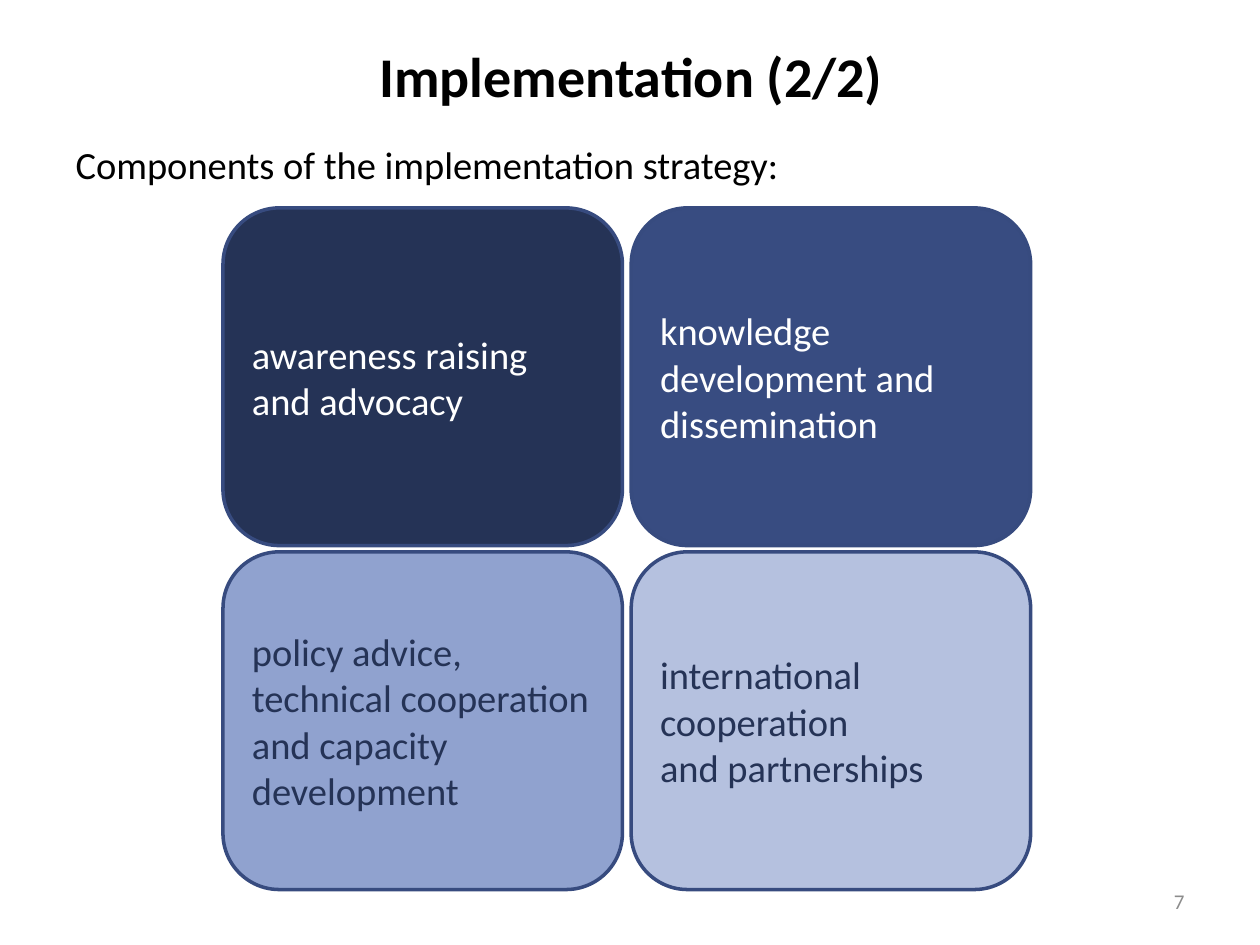
from lxml import etree
from pptx import Presentation
from pptx.dml.color import RGBColor
from pptx.enum.shapes import MSO_SHAPE
from pptx.enum.text import MSO_ANCHOR, MSO_AUTO_SIZE, PP_ALIGN
from pptx.oxml.ns import qn
from pptx.util import Inches, Pt

ROUND = MSO_SHAPE.ROUNDED_RECTANGLE
MIDDLE, TOP = MSO_ANCHOR.MIDDLE, MSO_ANCHOR.TOP
LEFT, CENTER, RIGHT = PP_ALIGN.LEFT, PP_ALIGN.CENTER, PP_ALIGN.RIGHT
FIXED = MSO_AUTO_SIZE.NONE

BLACK = RGBColor(0x00, 0x00, 0x00)
WHITE = RGBColor(0xFF, 0xFF, 0xFF)
GRAY = RGBColor(0x8C, 0x8C, 0x8C)
NAVY = RGBColor(0x25, 0x33, 0x56)
BLUE = RGBColor(0x38, 0x4C, 0x81)
SKY = RGBColor(0x90, 0xA2, 0xCF)
PALE = RGBColor(0xB5, 0xC1, 0xDF)
EDGE = RGBColor(0x37, 0x4B, 0x7F)

CARDS = [
    ("awareness raising and advocacy", NAVY, WHITE),
    ("knowledge development and dissemination", BLUE, WHITE),
    ("policy advice, technical cooperation and capacity development", SKY, NAVY),
    ("international cooperation\vand partnerships", PALE, NAVY),
]


class Deck:
    """Holds the text style and the current slide, and adds its elements."""

    font = "Calibri"

    def __init__(self):
        self.prs = Presentation()
        self.prs.slide_width, self.prs.slide_height = Inches(10), Inches(7.5)
        self.slide = self.prs.slides.add_slide(self.prs.slide_layouts[1])

    def place(self, shape, box):
        for name, size in zip(("left", "top", "width", "height"), box):
            setattr(shape, name, Inches(size))

    def apply(self, target, values):
        for name, value in values.items():
            setattr(target, name, value)

    def fill_text(self, shape, text, size, color, align=LEFT, anchor=MIDDLE, bold=False, after=0):
        frame = shape.text_frame
        frame.text = text
        para = frame.paragraphs[0]
        self.apply(frame, {"word_wrap": True, "auto_size": FIXED, "vertical_anchor": anchor})
        self.apply(para, {"alignment": align, "space_after": Pt(after)})
        for run in para.runs:
            self.apply(run.font, {"name": self.font, "size": Pt(size), "bold": bold})
            run.font.color.rgb = color
        return para

    def title(self, text, box):
        shape = self.slide.shapes.title
        self.place(shape, box)
        self.fill_text(shape, text, 32, BLACK, CENTER, bold=True)

    def body(self, text, box):
        shape = self.slide.placeholders[1]
        self.place(shape, box)
        para = self.fill_text(shape, text, 22, BLACK, anchor=TOP, after=6)
        para.space_before = Pt(4.4)
        props = para._p.get_or_add_pPr()
        props.set("marL", "0")
        props.set("indent", "0")
        etree.SubElement(props, qn("a:buNone"))

    def label(self, text, box):
        shape = self.slide.shapes.add_textbox(*map(Inches, box))
        self.fill_text(shape, text, 12, GRAY, RIGHT)

    def card(self, text, fill, color, box):
        shape = self.slide.shapes.add_shape(ROUND, *map(Inches, box))
        shape.shadow.inherit = False
        shape.fill.solid()
        shape.fill.fore_color.rgb = fill
        shape.line.color.rgb = EDGE
        shape.line.width = Pt(2)
        self.fill_text(shape, text, 22, color, after=6)


def main():
    deck = Deck()
    deck.title("Implementation (2/2)", (0.51, 0.21, 9, 0.78))
    deck.body("Components of the implementation strategy:", (0.5, 1.07, 9, 0.47))
    deck.label("7", (7.17, 6.95, 2.33, 0.4))
    for i, (text, fill, color) in enumerate(CARDS):
        row, col = divmod(i, 2)
        deck.card(text, fill, color, (1.77 + 3.24 * col, 1.65 + 2.73 * row, 3.17, 2.68))
    deck.prs.save("out.pptx")


if __name__ == "__main__":
    main()
